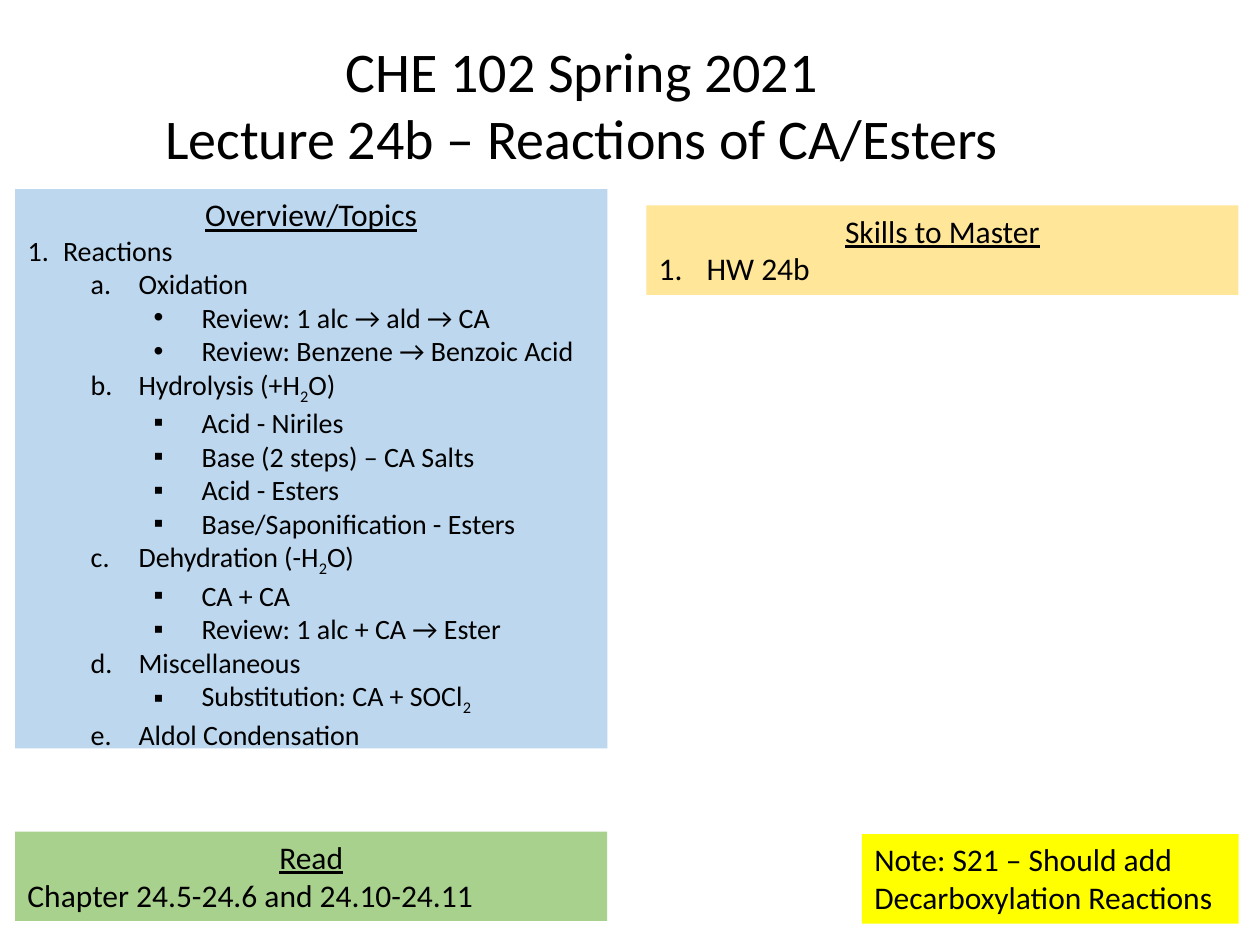
from dataclasses import dataclass

from lxml import etree
from pptx import Presentation
from pptx import util as u
from pptx.dml.color import RGBColor
from pptx.enum import shapes, text
from pptx.oxml import ns


@dataclass(frozen=True)
class Theme:
    font: str = "Calibri"
    ink: str = "000000"
    blue: str = "BDD7EE"
    gold: str = "FFE699"
    green: str = "A9D18E"
    yellow: str = "FFFF00"
    title: int = 32
    body: int = 18
    topic: int = 16


theme = Theme()

# style: (level, left margin, hanging indent, bullet tag, bullet attributes)
NUMBER = ("buAutoNum", {"type": "arabicPeriod"})
STYLES = {
    "plain": (0, 0, 0, "buNone", {}),
    "heading": (0, 0, 0, "buNone", {}),
    "topic": (0, 0.28, 0.28, *NUMBER),
    "skill": (0, 0.38, 0.38, *NUMBER),
    "letter": (1, 0.88, 0.38, "buAutoNum", {"type": "alphaLcPeriod"}),
    "dot": (2, 1.38, 0.38, "buChar", {"char": "•"}),
    "square": (2, 1.38, 0.38, "buChar", {"char": "▪"}),
}


def add_line(frame, index, style, line, size):
    """Write one paragraph; text between underscores becomes a subscript."""
    paragraph = frame.paragraphs[0] if index == 0 else frame.add_paragraph()
    level, margin, hanging, tag, attributes = STYLES[style]
    paragraph.level = level
    paragraph.space_before = u.Pt(0)
    if style == "heading":
        paragraph.alignment = text.PP_ALIGN.CENTER
    else:
        paragraph.alignment = text.PP_ALIGN.LEFT
    properties = paragraph._p.get_or_add_pPr()
    properties.set("marL", str(u.Inches(margin)))
    properties.set("indent", str(u.Inches(-hanging)))
    if tag != "buNone":
        typeface = "Arial" if tag == "buChar" else theme.font
        etree.SubElement(properties, ns.qn("a:buFont"), typeface=typeface)
    etree.SubElement(properties, ns.qn(f"a:{tag}"), attributes)
    for position, part in enumerate(line.split("_")):
        if not part:
            continue
        run = paragraph.add_run()
        run.text = part
        run.font.name = theme.font
        run.font.size = u.Pt(size)
        run.font.color.rgb = RGBColor.from_string(theme.ink)
        if style == "heading" and size == theme.body:
            run.font.underline = True
        if position % 2:
            run._r.get_or_add_rPr().set("baseline", "-25000")


def place(shape, left, top, width, height):
    shape.left, shape.top = u.Inches(left), u.Inches(top)
    shape.width, shape.height = u.Inches(width), u.Inches(height)


presentation = Presentation()
presentation.slide_width = u.Inches(10)
presentation.slide_height = u.Inches(7.5)
slide = presentation.slides.add_slide(presentation.slide_layouts[1])

# Title
title = slide.shapes.title
place(title, 1.18, 0.23, 6.88, 1.18)
title.text_frame.auto_size = text.MSO_AUTO_SIZE.NONE
title.text_frame.word_wrap = False
for index, line in enumerate(["CHE 102 Spring 2021",
                              "Lecture 24b – Reactions of CA/Esters"]):
    add_line(title.text_frame, index, "heading", line, theme.title)

# Panels: the topic list is the body placeholder, the rest are rectangles
overview = [
    ("heading", "Overview/Topics"),
    ("topic", "Reactions"),
    ("letter", "Oxidation"),
    ("dot", "Review: 1 alc → ald → CA"),
    ("dot", "Review: Benzene → Benzoic Acid"),
    ("letter", "Hydrolysis (+H_2_O)"),
    ("square", "Acid - Niriles"),
    ("square", "Base (2 steps) – CA Salts"),
    ("square", "Acid - Esters"),
    ("square", "Base/Saponification - Esters"),
    ("letter", "Dehydration (-H_2_O)"),
    ("square", "CA + CA"),
    ("square", "Review: 1 alc + CA → Ester"),
    ("letter", "Miscellaneous"),
    ("square", "Substitution: CA + SOCl_2_"),
    ("letter", "Aldol Condensation"),
]
skills = [("heading", "Skills to Master"), ("skill", "HW 24b")]
reading = [("heading", "Read"), ("plain", "Chapter 24.5-24.6 and 24.10-24.11")]
note = [("plain", "Note: S21 – Should add Decarboxylation Reactions")]

panels = [
    (overview, theme.blue, theme.topic, (0.12, 1.5, 4.7, 4.44)),
    (skills, theme.gold, theme.body, (5.13, 1.63, 4.7, 0.71)),
    (reading, theme.green, theme.body, (0.12, 6.6, 4.7, 0.71)),
    (note, theme.yellow, theme.body, (6.84, 6.62, 2.99, 0.71)),
]
for lines, fill, size, box in panels:
    if lines is overview:
        panel = slide.placeholders[1]
    else:
        panel = slide.shapes.add_shape(shapes.MSO_SHAPE.RECTANGLE, 0, 0, 0, 0)
        panel.shadow.inherit = False
    place(panel, *box)
    panel.fill.solid()
    panel.fill.fore_color.rgb = RGBColor.from_string(fill)
    panel.line.fill.background()
    frame = panel.text_frame
    frame.word_wrap = True
    frame.auto_size = text.MSO_AUTO_SIZE.NONE
    frame.vertical_anchor = text.MSO_ANCHOR.TOP
    for index, (style, line) in enumerate(lines):
        add_line(frame, index, style, line,
                 theme.body if style == "heading" else size)

presentation.save("out.pptx")
